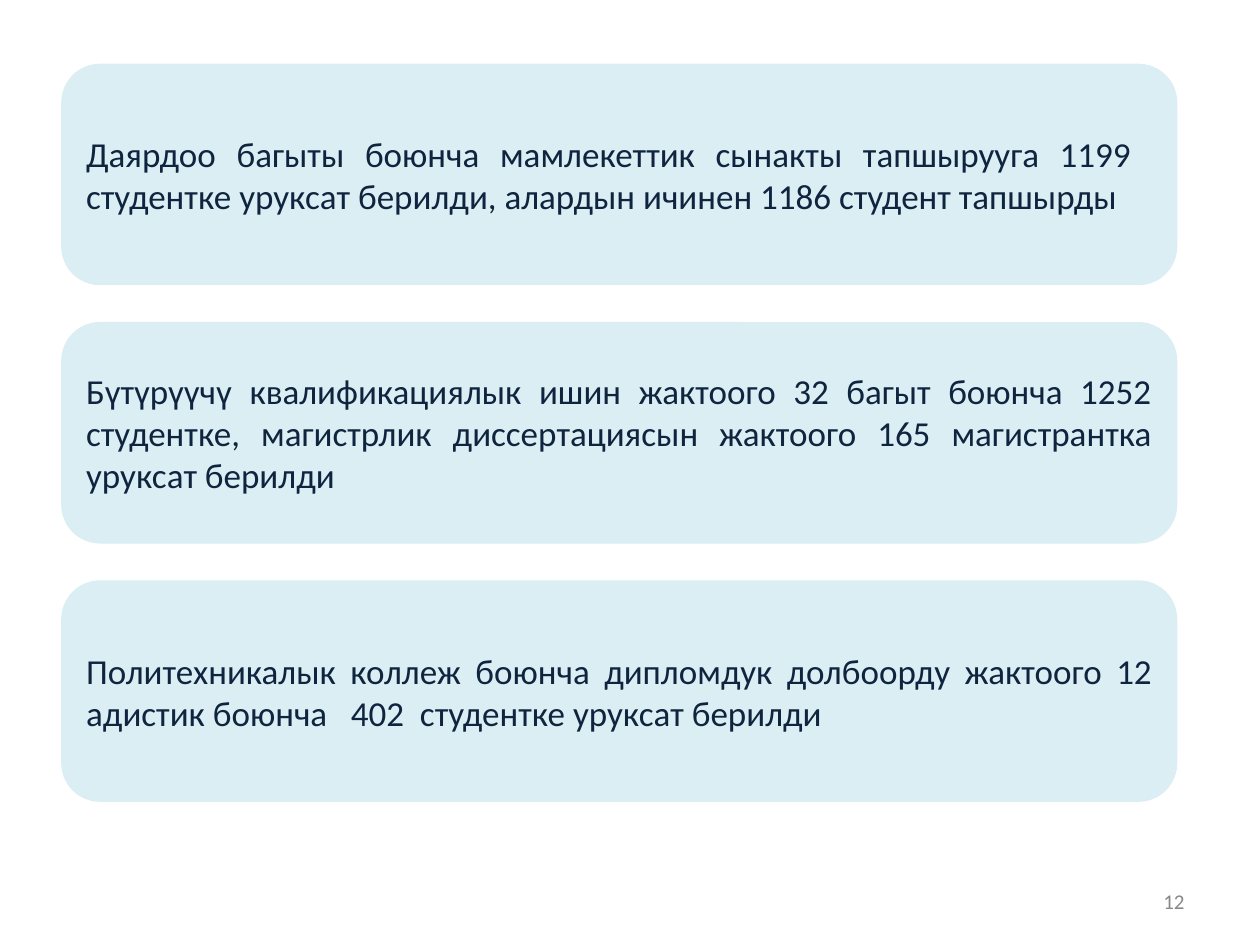
from pptx import Presentation
from pptx.dml.color import RGBColor
from pptx.enum import shapes, text
from pptx import util as u

PALE_BLUE = RGBColor(0xDA, 0xEE, 0xF3)
NAVY = RGBColor(0x0F, 0x24, 0x3E)
GREY = RGBColor(0x88, 0x88, 0x88)

STATEMENTS = [
    "Даярдоо багыты боюнча мамлекеттик сынакты тапшырууга 1199  "
    "студентке уруксат берилди, алардын ичинен 1186 студент тапшырды",
    "Бүтүрүүчү квалификациялык ишин жактоого 32 багыт боюнча 1252 "
    "студентке, магистрлик диссертациясын жактоого 165 магистрантка "
    "уруксат берилди",
    "Политехникалык коллеж боюнча дипломдук долбоорду жактоого 12 "
    "адистик боюнча   402  студентке уруксат берилди",
]
CARD_TOP, CARD_HEIGHT, CARD_GAP = 0.52, 1.73, 0.32


def write(shape, words, size, color, align):
    """Put one vertically centred paragraph into the shape."""
    frame = shape.text_frame
    frame.word_wrap = True
    frame.vertical_anchor = text.MSO_ANCHOR.MIDDLE
    para = frame.paragraphs[0]
    para.alignment = align
    span = para.add_run()
    span.text = words
    span.font.name = "Calibri"
    span.font.size = u.Pt(size)
    span.font.color.rgb = color


deck = Presentation()
deck.slide_width, deck.slide_height = u.Inches(10), u.Inches(7.5)
page = deck.slides.add_slide(deck.slide_layouts[6])

# Page number
number = page.shapes.add_textbox(u.Inches(7.17), u.Inches(6.95),
                                 u.Inches(2.33), u.Inches(0.4))
write(number, "12", 12, GREY, text.PP_ALIGN.RIGHT)

# Stack of rounded cards, one per statement
for row, statement in enumerate(STATEMENTS):
    top = CARD_TOP + row * (CARD_HEIGHT + CARD_GAP)
    card = page.shapes.add_shape(
        shapes.MSO_SHAPE.ROUNDED_RECTANGLE,
        u.Inches(0.5), u.Inches(top), u.Inches(8.83), u.Inches(CARD_HEIGHT))
    card.adjustments[0] = 0.17
    card.shadow.inherit = False
    card.fill.solid()
    card.fill.fore_color.rgb = PALE_BLUE
    card.line.color.rgb = PALE_BLUE
    card.line.width = u.Pt(2)
    write(card, statement, 20, NAVY, text.PP_ALIGN.JUSTIFY)

deck.save("out.pptx")
